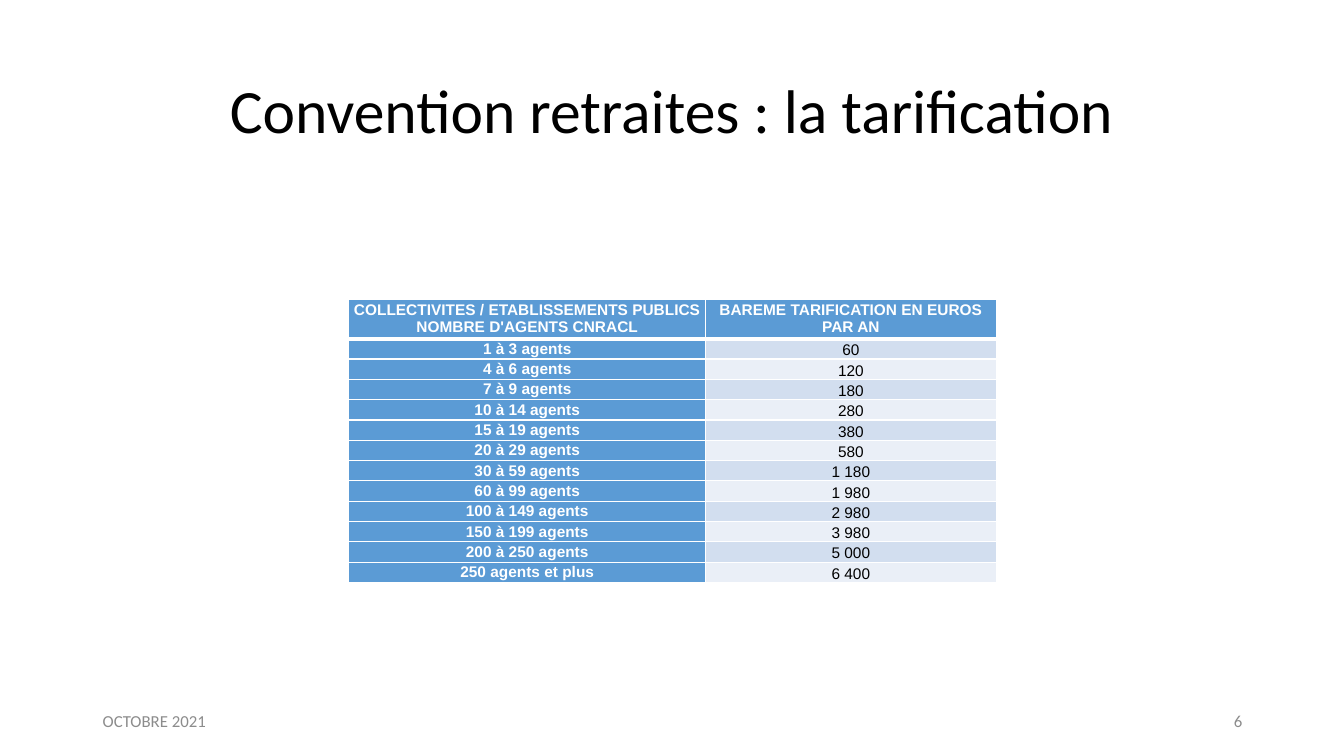
from lxml.etree import SubElement
from pptx import Presentation
from pptx.dml.color import RGBColor
from pptx.enum.text import MSO_ANCHOR, PP_ALIGN
from pptx.oxml.ns import qn
from pptx.util import Inches, Pt

# Content
TITLE = "Convention retraites : la tarification"
ROWS = [
    ("COLLECTIVITES / ETABLISSEMENTS PUBLICS NOMBRE D'AGENTS CNRACL",
     "BAREME TARIFICATION EN EUROS PAR AN"),
    ("1 à 3 agents", "60"),
    ("4 à 6 agents", "120"),
    ("7 à 9 agents", "180"),
    ("10 à 14 agents", "280"),
    ("15 à 19 agents", "380"),
    ("20 à 29 agents", "580"),
    ("30 à 59 agents", "1 180"),
    ("60 à 99 agents", "1 980"),
    ("100 à 149 agents", "2 980"),
    ("150 à 199 agents", "3 980"),
    ("200 à 250 agents", "5 000"),
    ("250 agents et plus", "6 400"),
]
FOOTERS = [
    ("OCTOBRE 2021", 0.92, PP_ALIGN.LEFT),
    ("6", 9.42, PP_ALIGN.RIGHT),
]
COLORS = {"white": "FFFFFF", "black": "000000", "blue": "5B9BD5",
          "odd": "D2DEEF", "even": "EAEFF7", "gray": "8C8C8C"}
COLS = (3.54, 2.88)
HEAD, HIGH = 0.39, 2.81


def color(name):
    return RGBColor.from_string(COLORS[name])


def write(frame, text, size, face, tint, align, bold=False):
    par = frame.paragraphs[0]
    par.alignment = align
    run = par.add_run()
    run.text = text
    font = run.font
    font.size, font.name, font.bold = Pt(size), face, bold
    font.color.rgb = color(tint)
    return par


def border(cell, widths):
    props = cell._tc.get_or_add_tcPr()
    for side, width in widths.items():
        line = SubElement(props, qn("a:ln" + side), w=str(Pt(width)))
        fill = SubElement(line, qn("a:solidFill"))
        SubElement(fill, qn("a:srgbClr"), val=COLORS["white"])


deck = Presentation()
deck.slide_width, deck.slide_height = Inches(13.33), Inches(7.5)
slide = deck.slides.add_slide(deck.slide_layouts[5])

# Title
title = slide.shapes.title
title.left, title.top = Inches(2.18), Inches(0.4)
title.width, title.height = Inches(10.24), Inches(1.45)
title.text_frame.vertical_anchor = MSO_ANCHOR.MIDDLE
par = write(title.text_frame, TITLE, 44, "Calibri", "black", PP_ALIGN.LEFT)
par.line_spacing = 0.9

# Price table
table = slide.shapes.add_table(
    len(ROWS), len(COLS), Inches(3.46), Inches(2.97),
    Inches(sum(COLS)), Inches(HIGH)).table
for col, width in zip(table.columns, COLS):
    col.width = Inches(width)
step = (HIGH - HEAD) / (len(ROWS) - 1)
for r, texts in enumerate(ROWS):
    table.rows[r].height = Inches(step if r else HEAD)
    for c, text in enumerate(texts):
        cell = table.cell(r, c)
        price = r > 0 and c == 1
        cell.margin_left = cell.margin_right = Inches(0.05)
        cell.margin_top = cell.margin_bottom = 0
        cell.vertical_anchor = MSO_ANCHOR.BOTTOM if price else MSO_ANCHOR.MIDDLE
        border(cell, {"L": 1, "R": 1, "T": 3 if r == 1 else 1,
                      "B": 3 if r == 0 else 1})
        band = "odd" if r % 2 else "even"
        cell.fill.solid()
        cell.fill.fore_color.rgb = color(band if price else "blue")
        write(cell.text_frame, text, 11, "Arial",
              "black" if price else "white", PP_ALIGN.CENTER, not price)

# Date and page number
for text, left, align in FOOTERS:
    box = slide.shapes.add_textbox(
        Inches(left), Inches(6.95), Inches(3), Inches(0.4))
    frame = box.text_frame
    frame.word_wrap = True
    frame.vertical_anchor = MSO_ANCHOR.MIDDLE
    write(frame, text, 12, "Calibri", "gray", align)

deck.save("out.pptx")
